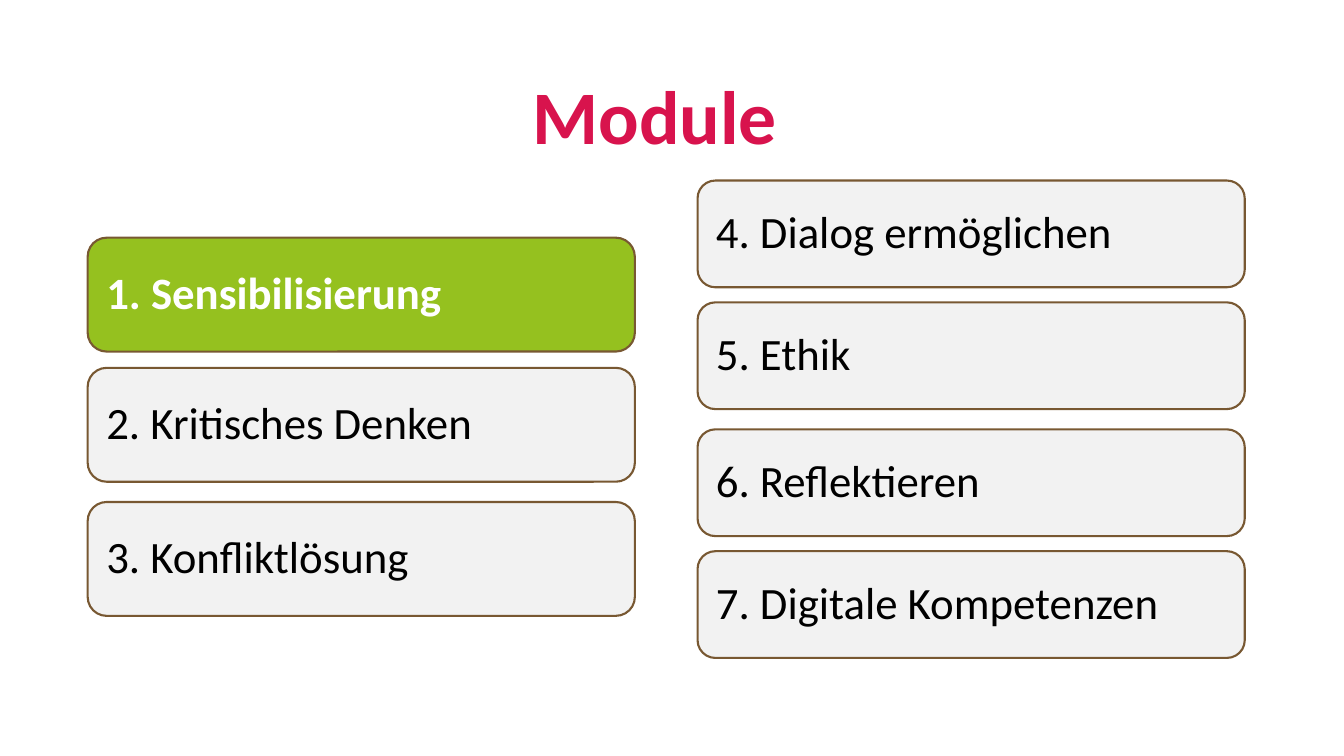
from pptx import Presentation
from pptx.dml.color import RGBColor as Rgb
from pptx.enum.shapes import MSO_SHAPE as Kind
from pptx.enum.text import MSO_ANCHOR as Anchor, PP_ALIGN as Align
from pptx.util import Cm, Pt

TITLE = "Module"
ACTIVE = "1. Sensibilisierung"
COLUMNS = [
    {"left": 2.21, "height": 2.87, "cards": [
        (5.99, ACTIVE),
        (9.27, "2. Kritisches Denken"),
        (12.65, "3. Konfliktlösung")]},
    {"left": 17.58, "height": 2.69, "cards": [
        (4.55, "4. Dialog ermöglichen"),
        (7.62, "5. Ethik"),
        (10.82, "6. Reflektieren"),
        (13.89, "7. Digitale Kompetenzen")]},
]
WIDTH = 13.79
INSET = 0.33
COLORS = {"title": "D8134D", "active": "95C11F", "card": "F2F2F2",
          "line": "785832", "light": "FFFFFF", "dark": "000000"}


def color(name):
    return Rgb.from_string(COLORS[name])


def write(shape, text, size, tone, bold, align, anchor):
    frame = shape.text_frame
    frame.text = text
    frame.word_wrap = True
    frame.vertical_anchor = anchor
    para = frame.paragraphs[0]
    para.alignment = align
    para.line_spacing = 0.9
    font = para.runs[0].font
    font.name = "Calibri"
    font.size = Pt(size)
    font.bold = bold
    font.color.rgb = color(tone)


def card(slide, left, top, height, text):
    active = text == ACTIVE
    box = slide.shapes.add_shape(
        Kind.ROUNDED_RECTANGLE, Cm(left), Cm(top), Cm(WIDTH), Cm(height))
    box.shadow.inherit = False
    box.fill.solid()
    box.fill.fore_color.rgb = color("active" if active else "card")
    box.line.color.rgb = color("line")
    box.line.width = Pt(1.5)
    frame = box.text_frame
    frame.margin_left = frame.margin_right = Cm(INSET)
    frame.margin_top = frame.margin_bottom = Cm(INSET)
    write(box, text, 32, "light" if active else "dark", active,
          Align.LEFT, Anchor.MIDDLE)


def main():
    """Build the module overview slide."""
    deck = Presentation()
    deck.slide_width, deck.slide_height = Cm(33.87), Cm(19.05)
    slide = deck.slides.add_slide(deck.slide_layouts[6])
    head = slide.shapes.add_textbox(Cm(0.03), Cm(-0.76), Cm(32.94), Cm(4.95))
    write(head, TITLE, 54, "title", True, Align.CENTER, Anchor.BOTTOM)
    for col in COLUMNS:
        for top, text in col["cards"]:
            card(slide, col["left"], top, col["height"], text)
    deck.save("out.pptx")


if __name__ == "__main__":
    main()
